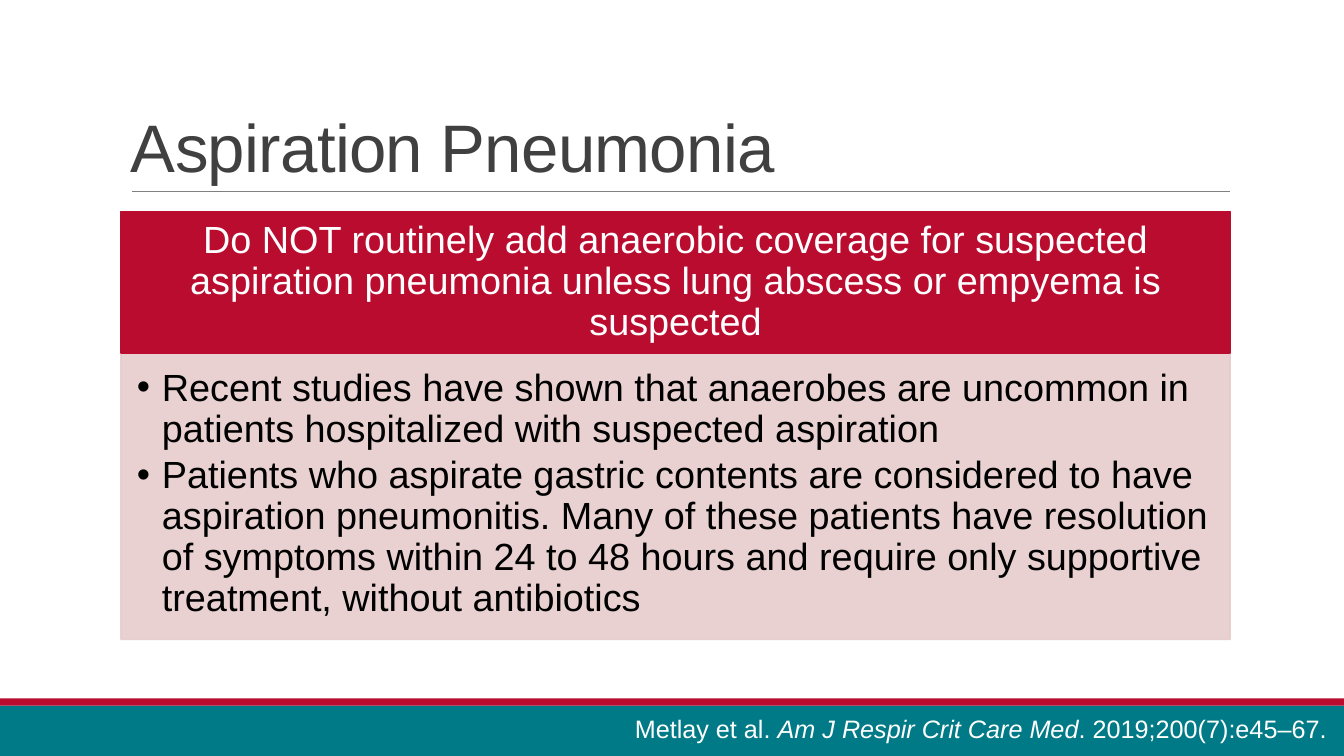
from lxml import etree
from pptx import Presentation
from pptx import util as u
from pptx.dml.color import RGBColor
from pptx.enum import shapes, text
from pptx.oxml.ns import qn

FONT = "Arial"
TEAL, RED, PINK = "007A86", "BA0C2F", "E7CCCD"
WHITE, BLACK, DARK, GREY = "FFFFFF", "000000", "404040", "808080"
SLIDE_W, SLIDE_H = 33.87, 19.05


def rgb(value):
    return RGBColor.from_string(value)


def place(sp, left, top, width, height):
    sp.left, sp.top, sp.width, sp.height = map(u.Cm, (left, top, width, height))


def paint(sp, fill, line=None, alpha=None):
    """Solid fill and optional outline, both at alpha percent opacity."""
    sp.fill.solid()
    sp.fill.fore_color.rgb = rgb(fill)
    if line:
        sp.line.color.rgb = rgb(line)
        sp.line.width = u.Pt(1.25)
    else:
        sp.line.fill.background()
    if alpha:
        for clr in sp._element.spPr.iter(qn("a:srgbClr")):
            etree.SubElement(clr, qn("a:alpha")).set("val", str(alpha * 1000))


def add_rect(s, box, fill, line=None):
    sp = s.shapes.add_shape(shapes.MSO_SHAPE.RECTANGLE, *map(u.Cm, box))
    sp.shadow.inherit = False
    paint(sp, fill, line)
    return sp


def set_frame(tf, anchor, insets):
    """Insets are left, top, right, bottom in cm."""
    tf.word_wrap = True
    tf.auto_size = text.MSO_AUTO_SIZE.NONE
    tf.vertical_anchor = anchor
    (tf.margin_left, tf.margin_top,
     tf.margin_right, tf.margin_bottom) = map(u.Cm, insets)


def add_run(p, words, size, color, italic=None):
    r = p.add_run()
    r.text = words
    r.font.name, r.font.size = FONT, u.Pt(size)
    r.font.color.rgb = rgb(color)
    r.font.italic = italic
    return r


def add_bullet(p, indent):
    pPr = p._p.get_or_add_pPr()
    pPr.set("marL", str(u.Cm(indent)))
    pPr.set("indent", str(u.Cm(-indent)))
    etree.SubElement(pPr, qn("a:buFont")).set("typeface", FONT)
    etree.SubElement(pPr, qn("a:buChar")).set("char", "•")


def fill_title(s, left, top, width, height, words):
    """Title text with a thin rule along the bottom of its box."""
    sp = s.shapes.title
    place(sp, left, top, width, height)
    set_frame(sp.text_frame, text.MSO_ANCHOR.BOTTOM, (0.25, 0.13, 0.25, 0.13))
    p = sp.text_frame.paragraphs[0]
    p.alignment = text.PP_ALIGN.LEFT
    p.line_spacing = 0.85
    r = add_run(p, words, 48, DARK)
    r.font._element.set("spc", "-50")

    y = u.Cm(top + height)
    rule = s.shapes.add_connector(shapes.MSO_CONNECTOR.STRAIGHT,
                                  u.Cm(left + 0.28), y, u.Cm(left + width), y)
    rule.line.color.rgb = rgb(GREY)
    rule.line.width = u.Pt(0.5)
    etree.SubElement(rule._element.spPr, qn("a:effectLst"))


def add_panel(s, left, top, width, height, heading, points):
    """Red heading band with a pink bullet list below it."""
    head_h = height * 0.33
    sp = add_rect(s, (left, top, width, head_h), RED, RED)
    set_frame(sp.text_frame, text.MSO_ANCHOR.MIDDLE, (0.53, 0.3, 0.53, 0.3))
    p = sp.text_frame.paragraphs[0]
    p.alignment = text.PP_ALIGN.CENTER
    p.line_spacing = 0.9
    add_run(p, heading, 27, WHITE)

    body = s.placeholders[1]
    place(body, left, top + head_h, width, height - head_h)
    paint(body, PINK, PINK, alpha=90)
    tf = body.text_frame
    set_frame(tf, text.MSO_ANCHOR.TOP, (0.4, 0.4, 0.53, 0.6))
    for i, point in enumerate(points):
        p = tf.add_paragraph() if i else tf.paragraphs[0]
        p.line_spacing = 0.9
        p.space_before, p.space_after = u.Pt(0), u.Pt(4)
        add_bullet(p, 0.63)
        add_run(p, point, 27, BLACK)


def add_footer(s, left, top, width, height, citation):
    """Teal band under a red stripe, with the citation in the band."""
    stripe_h = 0.18
    add_rect(s, (left, top + stripe_h, width, height - stripe_h), TEAL)
    add_rect(s, (left, top, width, stripe_h), RED)
    cite_w = 18.12
    sp = s.shapes.add_textbox(u.Cm(left + width - cite_w), u.Cm(top + 0.26),
                              u.Cm(cite_w), u.Cm(1.02))
    sp.text_frame.word_wrap = True
    sp.text_frame.auto_size = text.MSO_AUTO_SIZE.SHAPE_TO_FIT_TEXT
    p = sp.text_frame.paragraphs[0]
    for words, italic in citation:
        add_run(p, words, 18, WHITE, italic)


def main():
    prs = Presentation()
    prs.slide_width, prs.slide_height = u.Cm(SLIDE_W), u.Cm(SLIDE_H)
    s = prs.slides.add_slide(prs.slide_layouts[1])
    left, width = 3.05, 27.95
    add_footer(s, 0, 17.6, SLIDE_W, SLIDE_H - 17.6, [
        ("Metlay et al. ", False),
        ("Am J Respir Crit Care Med", True),
        (". 2019;200(7):e45–67.", False),
    ])
    fill_title(s, left, 0.79, width, 4.04, "Aspiration Pneumonia")
    add_panel(
        s, left, 5.33, width, 10.78,
        "Do NOT routinely add anaerobic coverage for suspected aspiration "
        "pneumonia unless lung abscess or empyema is suspected",
        ["Recent studies have shown that anaerobes are uncommon in patients "
         "hospitalized with suspected aspiration",
         "Patients who aspirate gastric contents are considered to have "
         "aspiration pneumonitis. Many of these patients have resolution of "
         "symptoms within 24 to 48 hours and require only supportive "
         "treatment, without antibiotics"])
    prs.save("out.pptx")


if __name__ == "__main__":
    main()
